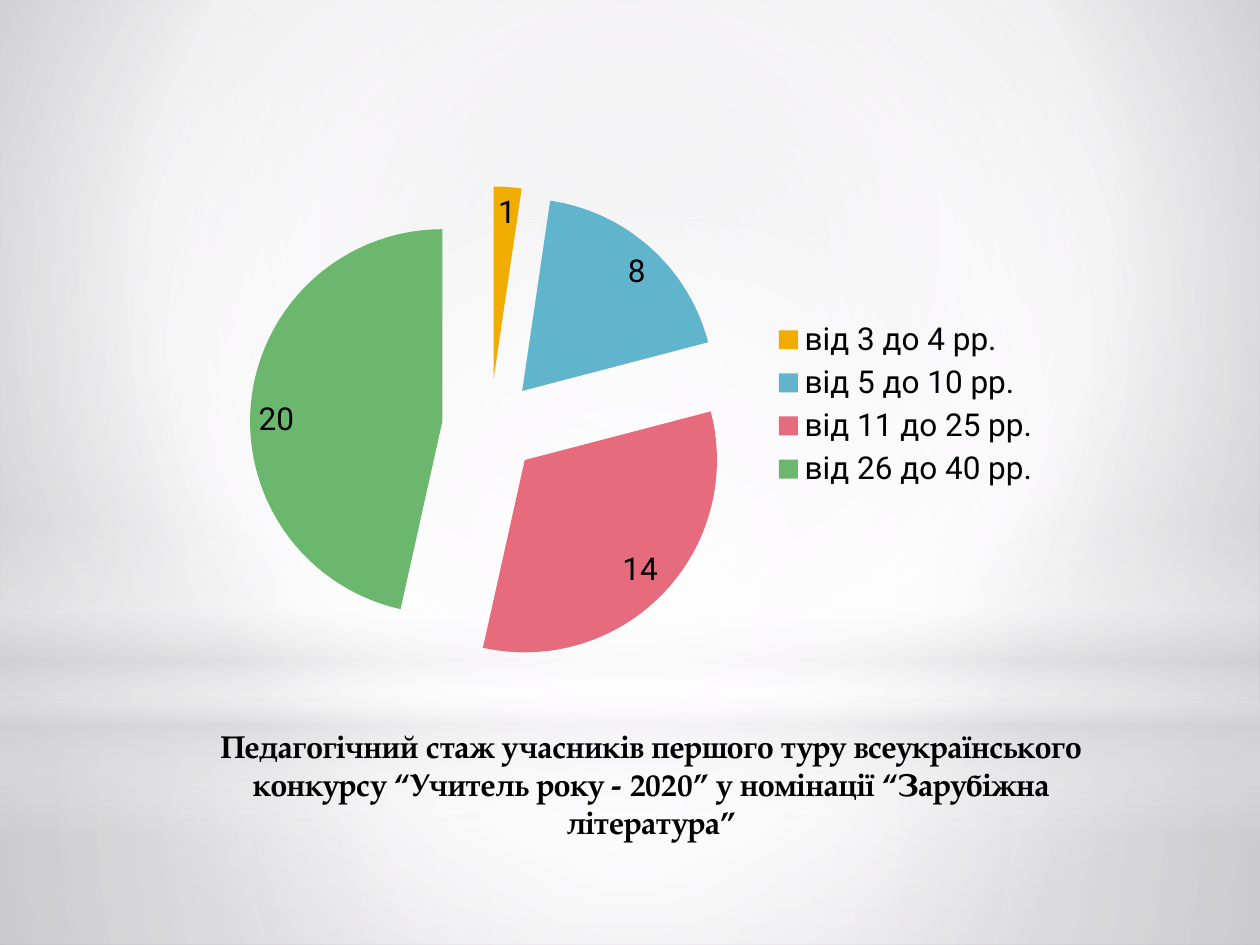
from lxml import etree
from pptx import Presentation
from pptx.chart.data import CategoryChartData
from pptx.dml.color import RGBColor
from pptx.enum.chart import XL_CHART_TYPE, XL_LABEL_POSITION, XL_LEGEND_POSITION
from pptx.enum.shapes import MSO_SHAPE
from pptx.enum.text import MSO_ANCHOR, PP_ALIGN
from pptx.oxml.ns import qn
from pptx.util import Emu, Pt

PIE = XL_CHART_TYPE.PIE
INSIDE_END = XL_LABEL_POSITION.INSIDE_END
RIGHT = XL_LEGEND_POSITION.RIGHT
RECTANGLE, OVAL = MSO_SHAPE.RECTANGLE, MSO_SHAPE.OVAL
TOP, CENTER = MSO_ANCHOR.TOP, PP_ALIGN.CENTER

PAGE_WIDTH, PAGE_HEIGHT = 1260, 945
EMU_PER_PX = 914400 / 126
MIDDLE = (50, 50, 50, 50)

TITLE = ("Педагогічний стаж учасників першого туру всеукраїнського "
         "конкурсу “Учитель року - 2020” у номінації “Зарубіжна література”")
EXPERIENCE = [
    ("від 3 до 4 рр.", 1, "F0AD00"),
    ("від 5 до 10 рр.", 8, "60B5CC"),
    ("від 11 до 25 рр.", 14, "E66C7D"),
    ("від 26 до 40 рр.", 20, "6BB76D"),
]


def px(length):
    return Emu(round(length * EMU_PER_PX))


def color(code):
    return RGBColor.from_string(code)


def add_node(parent, tag, **attributes):
    node = etree.SubElement(parent, qn(tag))
    for name, value in attributes.items():
        node.set(name, str(value))
    return node


def set_gradient(fill, element, stops, focus=None):
    """Stops are (position, colour, opacity) in percent; no focus means top to bottom."""
    fill.gradient()
    gradient = next(element.iter(qn("a:gradFill")))
    for child in list(gradient):
        gradient.remove(child)
    stop_list = add_node(gradient, "a:gsLst")
    for position, code, opacity in stops:
        stop = add_node(stop_list, "a:gs", pos=position * 1000)
        tint = add_node(stop, "a:srgbClr", val=code)
        if opacity < 100:
            add_node(tint, "a:alpha", val=opacity * 1000)
    if focus:
        circle = add_node(gradient, "a:path", path="circle")
        edges = {side: share * 1000 for side, share in zip("ltrb", focus)}
        add_node(circle, "a:fillToRect", **edges)
    else:
        add_node(gradient, "a:lin", ang=90 * 60000, scaled=0)


def add_glow(page, kind, box, stops, focus=None):
    shape = page.shapes.add_shape(kind, *map(px, box))
    shape.shadow.inherit = False
    shape.line.fill.background()
    set_gradient(shape.fill, shape._element.spPr, stops, focus)


def add_backdrop(page, horizon):
    """Lit wall above the horizon, floor below it, and a haze across both."""
    set_gradient(page.background.fill, page._element,
                 [(0, "CBCBCE", 100), (60, "FFFFFF", 100), (100, "A9A9AE", 100)],
                 (20, 10, 20, 60))
    add_glow(page, RECTANGLE, (0, horizon, PAGE_WIDTH, PAGE_HEIGHT - horizon),
             [(0, "FFFEFF", 91), (37, "FFFEFF", 76), (100, "D4D4D6", 79)], MIDDLE)
    add_glow(page, RECTANGLE, (0, 0, PAGE_WIDTH, horizon),
             [(0, "FFFEFF", 89), (48, "FFFEFF", 62), (100, "D4D4D6", 79)], MIDDLE)
    add_glow(page, RECTANGLE, (0, 519, PAGE_WIDTH, 315),
             [(0, "FFFEFF", 0), (29, "FFFEFF", 30), (45, "D4D4D6", 40),
              (55, "FFFEFF", 26), (65, "D4D4D6", 60), (100, "FFFEFF", 0)])
    add_glow(page, OVAL, (0, 220, PAGE_WIDTH, horizon),
             [(0, "FFFEFF", 100), (56, "FFFEFF", 0)], MIDDLE)


def add_title(page, box):
    frame = page.shapes.add_textbox(*map(px, box)).text_frame
    frame.word_wrap = True
    frame.vertical_anchor = TOP
    para = frame.paragraphs[0]
    para.text = TITLE
    para.alignment = CENTER
    para.font.name = "TeX Gyre Pagella"
    para.font.size = Pt(18)
    para.font.bold = True
    para.font.color.rgb = color("000000")


def place_plot(chart, **shares):
    """Fix the plot at the given shares of the chart's size."""
    plot_area = chart._chartSpace.chart.plotArea
    for old in plot_area.findall(qn("c:layout")):
        plot_area.remove(old)
    layout = etree.Element(qn("c:layout"))
    manual = add_node(layout, "c:manualLayout")
    add_node(manual, "c:layoutTarget", val="inner")
    for side in "xy":
        add_node(manual, f"c:{side}Mode", val="edge")
    for side, share in shares.items():
        add_node(manual, f"c:{side}", val=share)
    plot_area.insert(0, layout)


def add_experience_chart(page, box):
    names, counts, codes = zip(*EXPERIENCE)
    data = CategoryChartData()
    data.categories = names
    data.add_series("Series 1", counts)
    chart = page.shapes.add_chart(PIE, *map(px, box), data).chart
    chart.has_title = False
    chart.font.name = "Roboto"
    chart.font.size = Pt(18)
    chart.font.color.rgb = color("000000")
    chart.has_legend = True
    chart.legend.position = RIGHT
    chart.legend.include_in_layout = False
    place_plot(chart, x=0.04, y=0.11, w=0.58, h=0.86)

    plot = chart.plots[0]
    plot.vary_by_categories = True
    plot.has_data_labels = True
    plot.data_labels.show_value = True
    plot.data_labels.show_percentage = False
    plot.data_labels.position = INSIDE_END

    series = plot.series[0]
    for index, code in enumerate(codes):
        slice_format = series.points[index].format
        slice_format.fill.solid()
        slice_format.fill.fore_color.rgb = color(code)
        slice_format.line.fill.background()
    explosion = etree.Element(qn("c:explosion"), val="25")
    series._element.find(qn("c:dPt")).addprevious(explosion)


def main():
    deck = Presentation()
    deck.slide_width, deck.slide_height = px(PAGE_WIDTH), px(PAGE_HEIGHT)
    page = deck.slides.add_slide(deck.slide_layouts[6])
    add_backdrop(page, horizon=703)
    add_title(page, (203, 721, 897, 158))
    add_experience_chart(page, (213, 125, 840, 559))
    deck.save("out.pptx")


if __name__ == "__main__":
    main()
